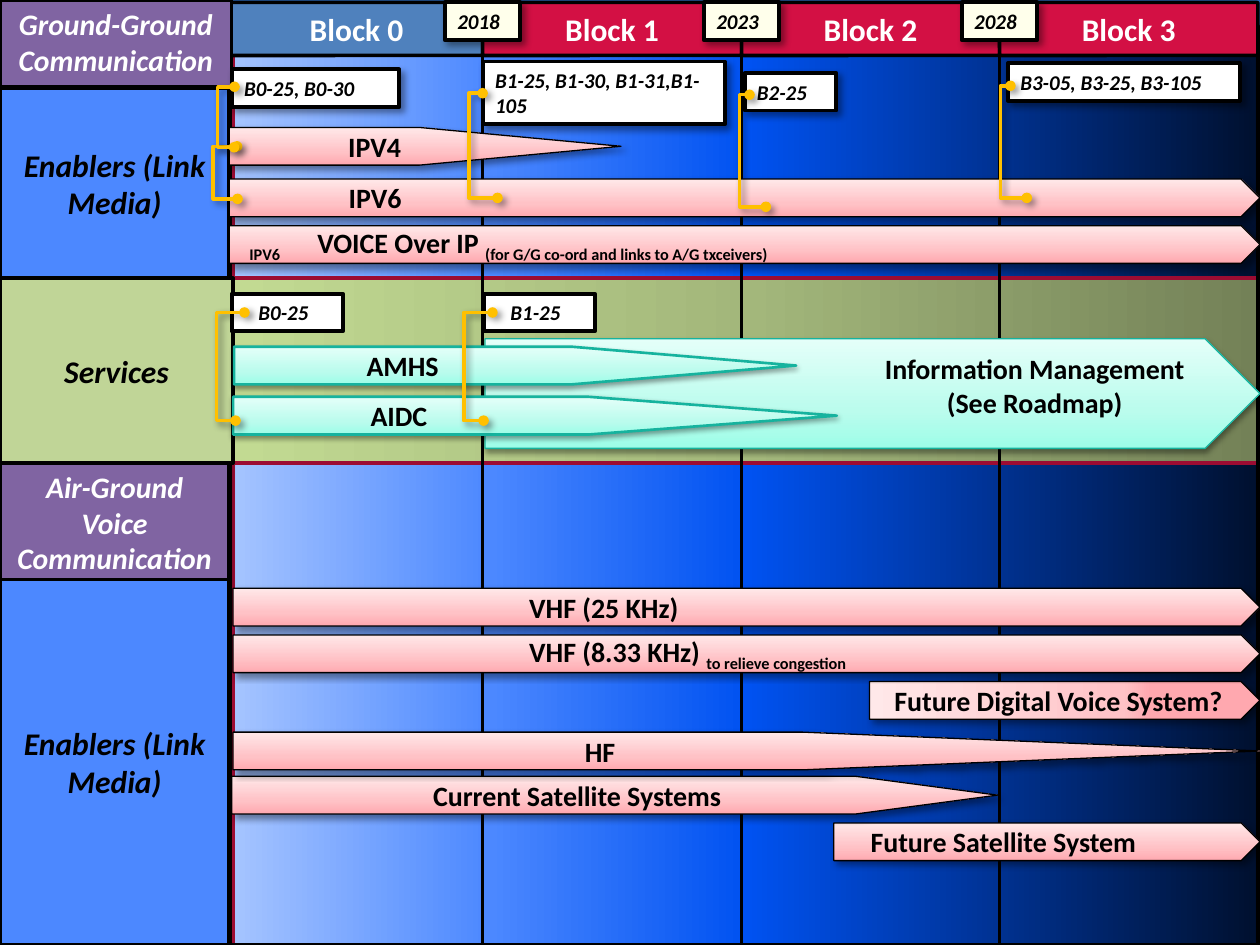
"""Build the ground and air communication roadmap slide."""
from dataclasses import dataclass
from typing import Optional

from lxml.etree import SubElement
from pptx import Presentation
from pptx.dml.color import RGBColor as RGB
from pptx.enum.shapes import MSO_CONNECTOR as Conn, MSO_SHAPE as Shape
from pptx.enum.text import MSO_ANCHOR as Anchor, PP_ALIGN as Align
from pptx.oxml.ns import qn
from pptx.util import Cm, Pt


@dataclass(frozen=True)
class Gradient:
    stops: tuple
    angle: int = 0


@dataclass(frozen=True)
class Shadow:
    alpha: int
    blur: float
    dist: float
    angle: int


@dataclass(frozen=True)
class Theme:
    font: str = "Calibri"
    black: str = "000000"
    white: str = "FFFFFF"
    back: str = "2C6ABA"
    band_edge: str = "9C0C32"
    current: str = "4F81BD"
    later: str = "D31044"
    date: str = "FFFFEB"
    title: str = "8064A2"
    enabler: str = "4C88FF"
    service: str = "C0D597"
    teal_edge: str = "16B39E"
    link: str = "FFC000"
    blue: Gradient = Gradient(((0, "A5C4FF"), (25, "4C88FF"), (50, "0052F1"), (100, "00102E")))
    green: Gradient = Gradient(((0, "738157"), (50, "A3B77B"), (100, "C2DA92")), 180)
    pink: Gradient = Gradient(((0, "FFA8AF"), (35, "FFC2C6"), (100, "FFE8E9")), 270)
    pink_side: Gradient = Gradient(((28, "FFA8AF"), (35, "FFC2C6"), (100, "FFE8E9")), 180)
    teal: Gradient = Gradient(((0, "9DFDE8"), (35, "BBFCED"), (100, "E4FFF9")), 270)
    slant: Shadow = Shadow(40, 4, 3, 45)
    drop: Shadow = Shadow(38, 3.1, 1.6, 90)
    head: int = 18
    panel: int = 17
    arrow: int = 16
    label: int = 12


T = Theme()


@dataclass(frozen=True)
class Box:
    x: float
    y: float
    w: float
    h: float
    fill: object = None
    text: str = ""
    size: int = T.head
    color: str = T.black
    italic: bool = True
    centred: bool = True
    middle: bool = True
    indent: float = 0.25
    bottom: float = 0.13
    edge: str = T.black
    edge_pt: float = 2
    shadow: Optional[Shadow] = None
    shape: Shape = Shape.RECTANGLE
    adj: Optional[float] = None


@dataclass(frozen=True)
class Link:
    x1: float
    y1: float
    via: float
    x2: float
    y2: float


def add_shadow(effects, shadow: Shadow) -> None:
    outer = SubElement(effects, qn("a:outerShdw"), blurRad=str(Pt(shadow.blur)),
                       dist=str(Pt(shadow.dist)), dir=str(shadow.angle * 60000), rotWithShape="0")
    color = SubElement(outer, qn("a:srgbClr"), val=T.black)
    SubElement(color, qn("a:alpha"), val=str(shadow.alpha * 1000))


def paint(sp, fill) -> None:
    if isinstance(fill, Gradient):
        grad = SubElement(sp._element.spPr, qn("a:gradFill"), rotWithShape="1")
        stops = SubElement(grad, qn("a:gsLst"))
        for pos, color in fill.stops:
            stop = SubElement(stops, qn("a:gs"), pos=str(pos * 1000))
            SubElement(stop, qn("a:srgbClr"), val=color)
        SubElement(grad, qn("a:lin"), ang=str(fill.angle * 60000), scaled="0")
    elif fill:
        sp.fill.solid()
        sp.fill.fore_color.rgb = RGB.from_string(fill)
    else:
        sp.fill.background()


def style(run, box: Box) -> None:
    f = run.font
    f.name, f.size, f.bold, f.italic = T.font, Pt(box.size), True, box.italic
    f.color.rgb = RGB.from_string(box.color)


def draw_box(s, box: Box):
    sp = s.shapes.add_shape(box.shape, Cm(box.x), Cm(box.y), Cm(box.w), Cm(box.h))
    if box.adj is not None:
        sp.adjustments[0] = box.adj
    paint(sp, box.fill)
    sp.line.color.rgb = RGB.from_string(box.edge)
    sp.line.width = Pt(box.edge_pt)
    sp.shadow.inherit = False
    if box.shadow:
        add_shadow(sp._element.spPr.find(qn("a:effectLst")), box.shadow)
    if box.text:
        tf = sp.text_frame
        tf.word_wrap = True
        tf.margin_left, tf.margin_bottom = Cm(box.indent), Cm(box.bottom)
        tf.vertical_anchor = Anchor.MIDDLE if box.middle else Anchor.TOP
        tf.text = box.text
        for p in tf.paragraphs:
            p.alignment = Align.CENTER if box.centred else Align.LEFT
            for r in p.runs:
                style(r, box)
    return sp


def add_subscripts(sp, box: Box, pieces: tuple, tab: Optional[float] = None) -> None:
    p = sp.text_frame.paragraphs[0]
    p.text = ""
    if tab:
        tabs = SubElement(p._p.get_or_add_pPr(), qn("a:tabLst"))
        SubElement(tabs, qn("a:tab"), pos=str(Cm(tab)), algn="l")
    for text, lowered in pieces:
        r = p.add_run()
        r.text = text
        style(r, box)
        if lowered:
            r._r.get_or_add_rPr().set("baseline", "-25000")


def draw_link(s, link: Link) -> None:
    c = s.shapes.add_connector(Conn.ELBOW, Cm(link.x1), Cm(link.y1), Cm(link.x2), Cm(link.y2))
    bend = round((link.via - link.x1) / (link.x2 - link.x1) * 100000)
    guides = c._element.spPr.find(qn("a:prstGeom")).find(qn("a:avLst"))
    SubElement(guides, qn("a:gd"), name="adj1", fmla=f"val {bend}")
    c.line.color.rgb = RGB.from_string(T.link)
    c.line.width = Pt(2)
    ln = c.line._get_or_add_ln()
    for end in ("a:headEnd", "a:tailEnd"):
        SubElement(ln, qn(end), type="oval")
    add_shadow(SubElement(c._element.spPr, qn("a:effectLst")), T.slant)


def arrow(x: float, y: float, w: float, text: str, indent: float = 0.25, **kw) -> Box:
    look = dict(h=0.76, fill=T.pink, size=T.arrow, italic=False, centred=False,
                edge_pt=0.75, shadow=T.slant, shape=Shape.PENTAGON)
    return Box(x, y, w, text=text, indent=indent, **{**look, **kw})


def label(x: float, y: float, w: float, text: str, **kw) -> Box:
    look = dict(h=0.76, fill=T.white, size=T.label, centred=False, middle=False,
                edge_pt=2.25, shadow=T.slant)
    return Box(x, y, w, text=text, **{**look, **kw})


EDGES = (4.65, 9.73, 14.95, 20.15, 25.36)
BANDS = ((9.32, 9.73, T.blue), (5.61, 3.73, T.green), (1.09, 4.52, T.blue))
PANELS = (
    Box(0, 0, 4.67, 1.75, T.title, "Ground-Ground Communication", T.panel, T.white, middle=False),
    Box(0, 1.78, 4.62, 3.84, T.enabler, "Enablers (Link Media)"),
    Box(0, 9.3, 4.62, 2.46, T.title, "Air-Ground\nVoice\nCommunication", T.panel, T.white,
        edge_pt=2.25, shadow=T.drop),
    Box(0, 5.61, 4.7, 3.73, T.service, "Services"),
    Box(0, 11.68, 4.62, 7.37, T.enabler, "Enablers (Link Media)"),
)
TEAL = dict(fill=T.teal, edge=T.teal_edge, shadow=T.drop)
VOICE = arrow(4.62, 4.55, 20.78, "VOICE", 0.41)
VHF_NARROW = arrow(4.7, 12.8, 20.7, "VHF", 5.97)
ARROWS = (
    arrow(4.62, 3.61, 20.78, "IPV6", 2.41),
    arrow(9.78, 6.83, 15.62, "Information Management\n(See Roadmap)", 7.34, h=2.21,
          centred=True, bottom=0.45, **TEAL),
    arrow(4.72, 6.99, 11.33, "AMHS", 2.67, adj=5.96, edge_pt=1.5, **TEAL),
    arrow(4.7, 8, 12.17, "AIDC", 2.77, adj=6.58, edge_pt=1.5, **TEAL),
    arrow(4.62, 2.57, 7.9, "IPV4", centred=True, adj=5.35),
    arrow(16.81, 16.59, 8.59, "Future Satellite System", 0.74),
    arrow(4.7, 11.86, 20.7, "VHF (25 KHz)", 5.97),
    arrow(17.53, 13.74, 7.87, "Future Digital Voice System?", 0.5, fill=T.pink_side),
    arrow(4.67, 15.65, 15.44, "Current Satellite Systems", 4.06, adj=3.76),
    arrow(4.7, 14.76, 20.7, "HF", 7.09, adj=12.13),
)
LABELS = (
    label(4.67, 1.4, 3.38, "B0-25, B0-30"),
    label(9.73, 1.24, 4.88, "B1-25, B1-30, B1-31,B1-105", h=1.27),
    label(15.01, 1.47, 1.85, "B2-25"),
    label(20.32, 1.27, 4.67, "B3-05, B3-25, B3-105"),
    label(4.67, 5.92, 2.24, "B0-25", indent=0.54, shadow=None),
    label(9.75, 5.92, 2.24, "B1-25", indent=0.54, shadow=None),
)
LINKS = (
    Link(4.78, 2.95, 4.3, 4.79, 4.01), Link(9.73, 1.88, 9.45, 10.03, 3.99),
    Link(4.73, 1.75, 4.39, 4.72, 2.97), Link(4.93, 6.3, 4.37, 4.75, 8.48),
    Link(9.93, 6.3, 9.35, 9.75, 8.48), Link(15.11, 1.91, 14.91, 15.44, 4.17),
    Link(20.37, 1.73, 20.17, 20.7, 3.99),
)


def main() -> None:
    prs = Presentation()
    prs.slide_width, prs.slide_height = Cm(25.4), Cm(19.05)
    s = prs.slides.add_slide(prs.slide_layouts[6])
    s.background.fill.solid()
    s.background.fill.fore_color.rgb = RGB.from_string(T.back)
    columns = list(zip(EDGES, EDGES[1:]))
    boxes = [Box(4.7, y, 20.7, h, fill, edge=T.band_edge) for y, h, fill in BANDS]
    boxes += [Box(a, 0.53, b - a, 18.52) for a, b in columns]
    boxes += [Box(a, 0.05, b - a, 1.07, T.later if i else T.current, f"Block {i}", color=T.white,
                  italic=False, shape=Shape.ROUNDED_RECTANGLE, adj=0.02)
              for i, (a, b) in enumerate(columns)]
    boxes += [label(x - 0.76, 0.05, 1.52, str(2018 + 5 * i), fill=T.date)
              for i, x in enumerate(EDGES[1:4])]
    for box in (*boxes, *PANELS, *ARROWS):
        draw_box(s, box)
    add_subscripts(draw_box(s, VOICE), VOICE, (
        ("IPV6", True), ("\tVOICE Over IP ", False),
        ("(for G/G co-ord and links to A/G txceivers)", True)), tab=1.37)
    add_subscripts(draw_box(s, VHF_NARROW), VHF_NARROW, (
        ("VHF (8.33 KHz) ", False), ("to relieve congestion", True)))
    for box in LABELS:
        draw_box(s, box)
    for link in LINKS:
        draw_link(s, link)
    prs.save("out.pptx")


if __name__ == "__main__":
    main()
